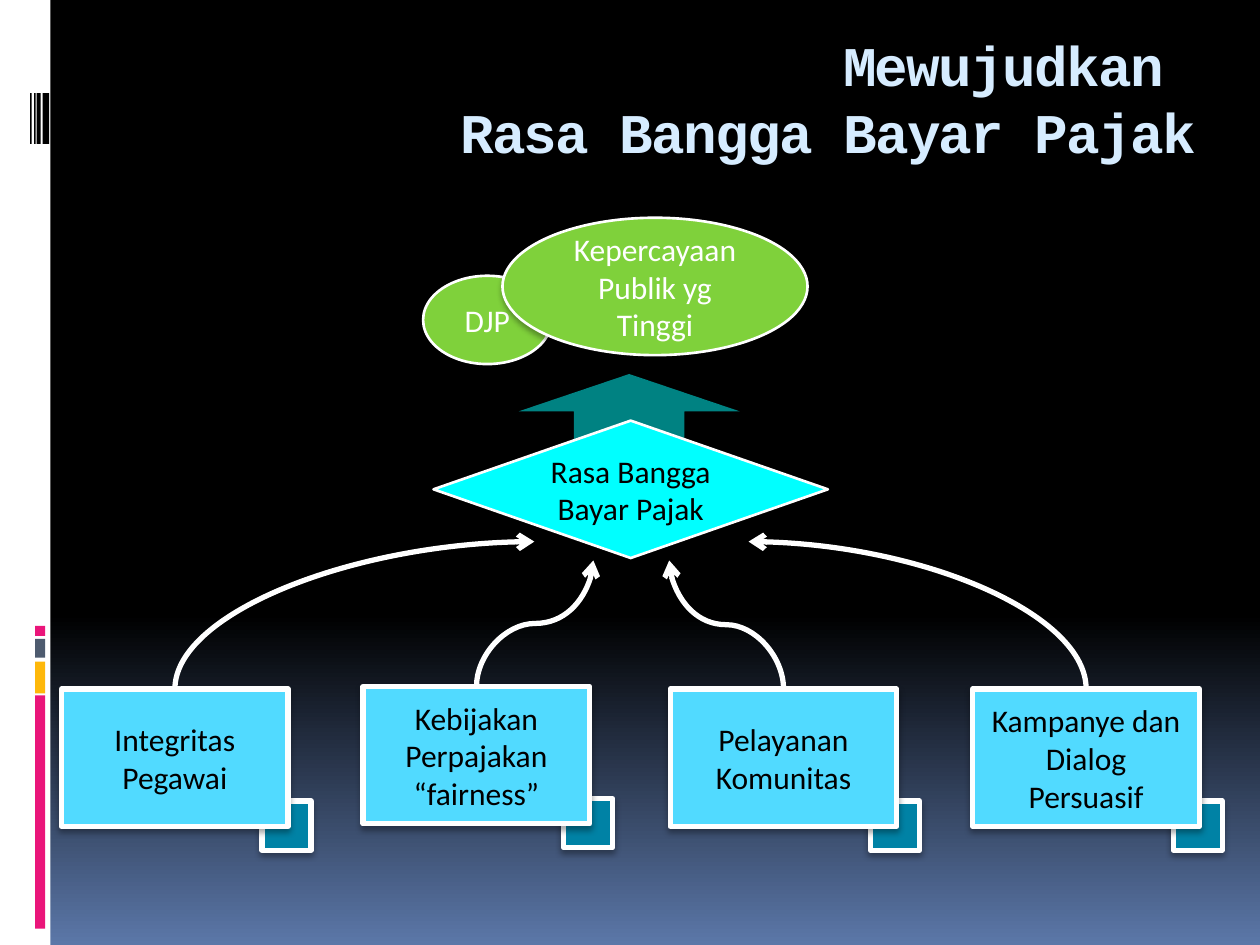
from lxml.etree import SubElement
from pptx import Presentation
from pptx.dml.color import RGBColor
from pptx.enum.shapes import MSO_CONNECTOR, MSO_SHAPE
from pptx.enum.text import MSO_ANCHOR, MSO_AUTO_SIZE, PP_ALIGN
from pptx.oxml.ns import qn
from pptx.util import Cm, Pt

WHITE, BLACK, CYAN, GREEN = "FFFFFF", "000000", "00FFFF", "7FD13B"
CARD_WIDTH, CARD_HEIGHT = 4.57, 2.77


def color(value):
    return RGBColor.from_string(value)


def add_shape(slide, kind, left, top, width, height, fill, line=None):
    shape = slide.shapes.add_shape(kind, Cm(left), Cm(top), Cm(width), Cm(height))
    shape.shadow.inherit = False
    shape.fill.solid()
    shape.fill.fore_color.rgb = color(fill)
    if line:
        shape.line.color.rgb = color(WHITE)
        shape.line.width = Pt(line)
        add_shadow(shape)
    else:
        shape.line.fill.background()
    return shape


def add_shadow(shape):
    effects = shape._element.spPr.find(qn("a:effectLst"))
    shadow = SubElement(effects, qn("a:outerShdw"), blurRad=str(Pt(3.5)),
                        dist=str(Pt(2.2)), dir="5400000", rotWithShape="0")
    shadow_color = SubElement(shadow, qn("a:srgbClr"), val=BLACK)
    SubElement(shadow_color, qn("a:alpha"), val="32000")


def write_label(shape, text, font_color):
    text_frame = shape.text_frame
    text_frame.text = text
    text_frame.word_wrap = True
    text_frame.vertical_anchor = MSO_ANCHOR.MIDDLE
    for paragraph in text_frame.paragraphs:
        paragraph.alignment = PP_ALIGN.CENTER
        for run in paragraph.runs:
            run.font.name = "Calibri"
            run.font.size = Pt(18)
            run.font.color.rgb = color(font_color)


def paint_background(slide):
    fill = slide.background.fill
    fill.gradient()
    fill.gradient_angle = 270
    for stop, position, value in zip(fill.gradient_stops, (0.65, 1), (BLACK, "5B77A8")):
        stop.position = position
        stop.color.rgb = color(value)


def draw_sidebar(slide, left, top, width, height):
    add_shape(slide, MSO_SHAPE.RECTANGLE, left, top, width, height, WHITE)
    for offset, bar_height, fill in ((14.02, 4.7, "EA157A"), (13.34, 0.64, "FEB80A"),
                                     (12.88, 0.38, "4E5B6F"), (12.62, 0.2, "EA157A")):
        add_shape(slide, MSO_SHAPE.RECTANGLE, left + 0.71, top + offset, 0.2, bar_height, fill)
    for offset, stripe_width in ((0.86, 0.13), (0.74, 0.08), (0.69, 0.03), (0.61, 0.03)):
        add_shape(slide, MSO_SHAPE.RECTANGLE, left + offset, top + 1.88, stripe_width, 1.02, BLACK)


def write_title(slide, left, top, width, height):
    title = slide.shapes.title
    title.left, title.top, title.width, title.height = Cm(left), Cm(top), Cm(width), Cm(height)
    text_frame = title.text_frame
    text_frame.text = "Mewujudkan \vRasa Bangga Bayar Pajak"
    text_frame.word_wrap = True
    text_frame.auto_size = MSO_AUTO_SIZE.NONE
    text_frame.vertical_anchor = MSO_ANCHOR.TOP
    paragraph = text_frame.paragraphs[0]
    paragraph.alignment = PP_ALIGN.RIGHT
    for run in paragraph.runs:
        run.font.name = "Courier New"
        run.font.size = Pt(32)
        run.font.bold = True
        run.font.color.rgb = color("D6ECFF")
        run._r.get_or_add_rPr().set("spc", "-100")


def draw_goal(slide, left, top):
    arrow = add_shape(slide, MSO_SHAPE.UP_ARROW, left + 1.93, top + 3.15, 4.45, 2.26, CYAN)
    arrow.adjustments[0], arrow.adjustments[1] = 0.5, 0.333
    arrow_color = arrow._element.spPr.find(qn("a:solidFill")).find(qn("a:srgbClr"))
    SubElement(arrow_color, qn("a:alpha"), val="51000")
    parts = (
        (MSO_SHAPE.OVAL, 0, 1.17, 2.59, 1.78, GREEN, "DJP", WHITE),
        (MSO_SHAPE.FLOWCHART_DECISION, 0.21, 4.09, 7.95, 2.77, CYAN,
         "Rasa Bangga Bayar Pajak", BLACK),
        (MSO_SHAPE.OVAL, 1.6, 0, 6.15, 2.77, GREEN, "Kepercayaan Publik yg Tinggi", WHITE),
    )
    for kind, x, y, width, height, fill, text, font_color in parts:
        shape = add_shape(slide, kind, left + x, top + y, width, height, fill, 1.5)
        write_label(shape, text, font_color)


def draw_card(slide, left, top, text):
    add_shape(slide, MSO_SHAPE.RECTANGLE, left + 4.04, top + 2.26, 0.99, 0.99, "0082A5", 3)
    card = add_shape(slide, MSO_SHAPE.RECTANGLE, left, top, CARD_WIDTH, CARD_HEIGHT, "51DAFF", 3)
    write_label(card, text, BLACK)


def draw_rising_curve(slide, start_x, start_y, end_x, end_y, preset):
    center_x, center_y = (start_x + end_x) / 2, (start_y + end_y) / 2
    half_width, half_height = abs(end_y - start_y) / 2, abs(end_x - start_x) / 2
    direction = 1 if end_x > start_x else -1
    connector = slide.shapes.add_connector(
        MSO_CONNECTOR.CURVE,
        Cm(center_x + direction * half_width), Cm(center_y + half_height),
        Cm(center_x - direction * half_width), Cm(center_y - half_height))
    connector.line.color.rgb = color(WHITE)
    connector.line.width = Pt(3)
    properties = connector._element.spPr
    properties.find(qn("a:xfrm")).set("rot", "5400000" if direction == 1 else "16200000")
    properties.find(qn("a:prstGeom")).set("prst", preset)
    SubElement(connector.line._get_or_add_ln(), qn("a:tailEnd"), type="arrow")
    SubElement(properties, qn("a:effectLst"))


def draw_drivers(slide, left, top):
    drivers = (
        (0, 0, "Integritas Pegawai", 9.53, -2.97, "curvedConnector2"),
        (6.08, -0.05, "Kebijakan Perpajakan\n“fairness”", 10.72, -2.59, "curvedConnector3"),
        (12.27, 0, "Pelayanan Komunitas", 12.25, -2.59, "curvedConnector3"),
        (18.37, 0, "Kampanye dan Dialog Persuasif", 13.85, -2.97, "curvedConnector2"),
    )
    for x, y, text, end_x, end_y, preset in drivers:
        draw_card(slide, left + x, top + y, text)
        draw_rising_curve(slide, left + x + CARD_WIDTH / 2, top + y,
                          left + end_x, top + end_y, preset)


def main():
    presentation = Presentation()
    presentation.slide_width, presentation.slide_height = Cm(25.4), Cm(19.05)
    slide = presentation.slides.add_slide(presentation.slide_layouts[5])
    paint_background(slide)
    draw_sidebar(slide, 0, 0, 1.02, 19.05)
    write_title(slide, 1.7, 0.48, 22.66, 2.74)
    draw_goal(slide, 8.53, 4.39)
    draw_drivers(slide, 1.24, 13.89)
    presentation.save("out.pptx")


if __name__ == "__main__":
    main()
